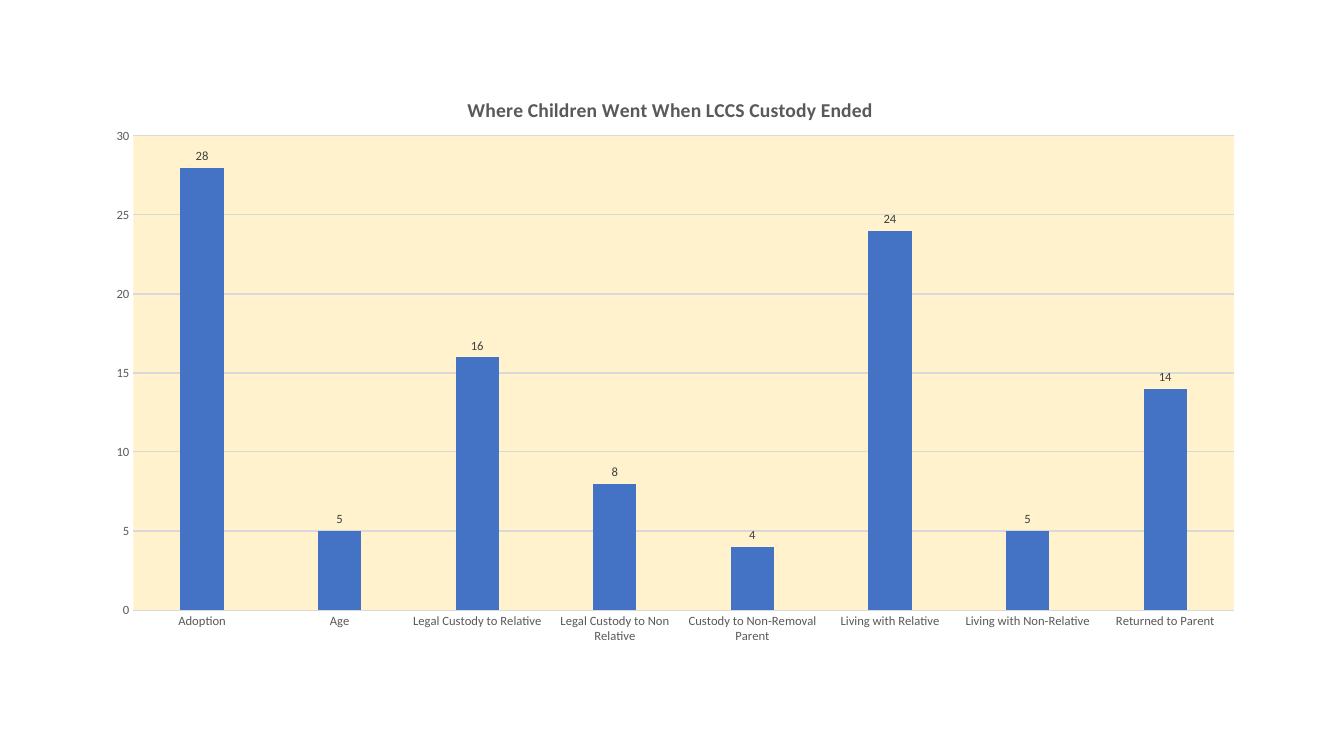
from lxml import etree
from pptx import Presentation
from pptx.chart.data import CategoryChartData
from pptx.dml.color import RGBColor
from pptx.enum.chart import XL_CHART_TYPE, XL_LABEL_POSITION, XL_TICK_MARK
from pptx.oxml import parse_xml
from pptx.oxml.ns import nsdecls, qn
from pptx.util import Inches, Pt

COLUMN = XL_CHART_TYPE.COLUMN_CLUSTERED
ABOVE = XL_LABEL_POSITION.OUTSIDE_END
NO_TICK = XL_TICK_MARK.NONE

HUES = {"bar": "4472C4", "plot": "FFF2CC", "grid": "D9D9D9",
        "text": "595959", "label": "404040"}
FACE = "Calibri"
TITLE = "Where Children Went When LCCS Custody Ended"
EXITS = {
    "Adoption": 28,
    "Age": 5,
    "Legal Custody to Relative": 16,
    "Legal Custody to Non Relative": 8,
    "Custody to Non-Removal Parent": 4,
    "Living with Relative": 24,
    "Living with Non-Relative": 5,
    "Returned to Parent": 14,
}


class Board:
    """Holds the style and the current slide."""

    def __init__(self, deck):
        self.wide, self.high = deck.slide_width, deck.slide_height
        self.slide = deck.slides.add_slide(deck.slide_layouts[6])

    def font(self, font, size, hue, bold=False):
        font.name, font.size, font.bold = FACE, Pt(size), bold
        font.color.rgb = RGBColor.from_string(HUES[hue])

    def line(self, line):
        line.color.rgb = RGBColor.from_string(HUES["grid"])
        line.width = Pt(0.75)

    def place(self, part, **spots):
        """Fix a chart part at shares of the chart's size."""
        layout = part.find(qn("c:layout"))
        if layout is None:
            layout = parse_xml(f"<c:layout {nsdecls('c')}/>")
            part.insert(1 if part.find(qn("c:tx")) is not None else 0, layout)
        manual = etree.SubElement(layout, qn("c:manualLayout"))
        if "w" in spots:
            etree.SubElement(manual, qn("c:layoutTarget"), val="inner")
        for axis in "xy":
            etree.SubElement(manual, qn(f"c:{axis}Mode"), val="edge")
        for key, share in spots.items():
            etree.SubElement(manual, qn(f"c:{key}"), val=str(share))

    def chart(self, x, y, w, h, counts):
        data = CategoryChartData()
        data.categories = list(counts)
        data.add_series("Series 1", list(counts.values()))
        frame = self.slide.shapes.add_chart(
            COLUMN, int(x * self.wide), int(y * self.high),
            int(w * self.wide), int(h * self.high), data)
        chart = frame.chart
        chart.has_legend = False
        chart.font.name, chart.font.size = FACE, Pt(10)
        return chart

    def title(self, chart, text, x, y):
        frame = chart.chart_title.text_frame
        frame.text = text
        self.font(frame.paragraphs[0].runs[0].font, 14, "text", True)
        self.place(chart.element.xpath("c:chart/c:title")[0], x=x, y=y)

    def bars(self, chart):
        plot = chart.plots[0]
        plot.gap_width, plot.overlap = 219, -27
        plot.vary_by_categories = False
        fill = plot.series[0].format.fill
        fill.solid()
        fill.fore_color.rgb = RGBColor.from_string(HUES["bar"])
        plot.has_data_labels = True
        labels = plot.data_labels
        labels.show_value, labels.position = True, ABOVE
        self.font(labels.font, 9, "label")

    def axes(self, chart, top, step):
        cats, vals = chart.category_axis, chart.value_axis
        for axis in (cats, vals):
            axis.major_tick_mark = axis.minor_tick_mark = NO_TICK
            self.font(axis.tick_labels.font, 9, "text")
        self.line(cats.format.line)
        vals.format.line.fill.background()
        vals.minimum_scale, vals.maximum_scale, vals.major_unit = 0, top, step
        vals.has_major_gridlines = True
        self.line(vals.major_gridlines.format.line)

    def area(self, chart, **spots):
        part = chart.element.xpath("c:chart/c:plotArea")[0]
        self.place(part, **spots)
        part.append(parse_xml(
            f'<c:spPr {nsdecls("c", "a")}><a:solidFill>'
            f'<a:srgbClr val="{HUES["plot"]}"/></a:solidFill></c:spPr>'))


def main():
    deck = Presentation()
    deck.slide_width, deck.slide_height = Inches(13.33), Inches(7.5)
    board = Board(deck)

    # Column chart with its title, bars, axes and tinted plot area
    chart = board.chart(0.069, 0.099, 0.863, 0.801, EXITS)
    board.title(chart, TITLE, x=0.32, y=0.03)
    board.bars(chart)
    board.axes(chart, top=30, step=5)
    board.area(chart, x=0.035, y=0.101, w=0.949, h=0.783)

    deck.save("out.pptx")


if __name__ == "__main__":
    main()
